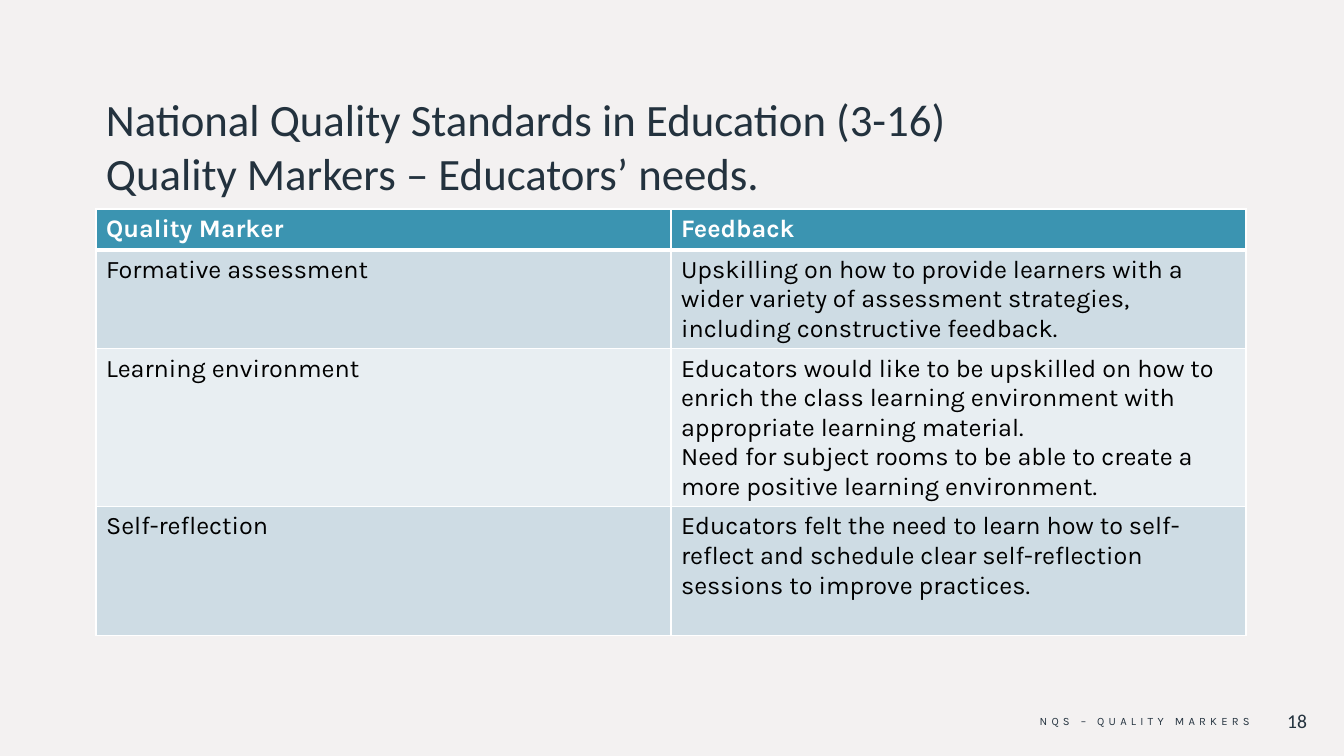
from dataclasses import dataclass

from lxml import etree
from pptx import Presentation
from pptx.dml.color import RGBColor
from pptx.enum.shapes import MSO_SHAPE
from pptx.enum.text import MSO_ANCHOR, PP_ALIGN
from pptx.oxml.ns import qn
from pptx.util import Emu, Pt

RECTANGLE = MSO_SHAPE.RECTANGLE
BOTTOM, MIDDLE = MSO_ANCHOR.BOTTOM, MSO_ANCHOR.MIDDLE
LEFT, RIGHT = PP_ALIGN.LEFT, PP_ALIGN.RIGHT

PAGE_WIDTH, PAGE_HEIGHT = 1344, 756
EMU_PER_PX = 12192000 / PAGE_WIDTH


@dataclass(frozen=True)
class Theme:
    ink: str = "23323E"
    black: str = "000000"
    white: str = "FFFFFF"
    tint: str = "B5A5A2"
    tint_opacity: int = 15
    header: str = "3B94B1"
    bands: tuple[str, str] = ("CEDCE4", "E8EEF2")
    heading_font: str = "Calibri"
    body_font: str = "Karla"
    title_size: int = 32
    table_size: int = 18
    number_size: int = 14
    footer_size: int = 8


THEME = Theme()


@dataclass(frozen=True)
class TextStyle:
    font: str
    size: int
    color: str
    bold: bool = False
    tracking: int = 0  # points between letters


@dataclass(frozen=True)
class Label:
    text: str
    place: tuple[int, int, int, int]
    style: TextStyle
    anchor: MSO_ANCHOR
    align: PP_ALIGN


@dataclass(frozen=True)
class Marker:
    name: str
    feedback: str
    height: int


LABELS = [
    Label("National Quality Standards in Education (3-16)\vQuality Markers – Educators’ needs.",
          (96, 65, 1152, 139),
          TextStyle(THEME.heading_font, THEME.title_size, THEME.ink), BOTTOM, LEFT),
    Label("NQS – QUALITY MARKERS", (786, 701, 474, 40),
          TextStyle(THEME.body_font, THEME.footer_size, THEME.ink, tracking=3),
          MIDDLE, RIGHT),
    Label("18", (1260, 701, 57, 40),
          TextStyle(THEME.heading_font, THEME.number_size, THEME.ink), MIDDLE, RIGHT),
]

TABLE_LEFT, TABLE_TOP, COLUMN_WIDTH = 96, 209, 575
MARKERS = [
    Marker("Quality Marker", "Feedback", 41),
    Marker("Formative assessment",
           "Upskilling on how to provide learners with a wider variety of "
           "assessment strategies, including constructive feedback.", 98),
    Marker("Learning environment",
           "Educators would like to be upskilled on how to enrich the class "
           "learning environment with appropriate learning material.\n"
           "Need for subject rooms to be able to create a more positive "
           "learning environment.", 158),
    Marker("Self-reflection",
           "Educators felt the need to learn how to self-reflect and schedule "
           "clear self-reflection sessions to improve practices.", 129),
]


def px(length: int) -> Emu:
    return Emu(round(length * EMU_PER_PX))


def write(frame, text: str, style: TextStyle, align: PP_ALIGN = LEFT) -> None:
    frame.text = text
    for para in frame.paragraphs:
        para.alignment = align
        for span in para.runs:
            settings = {"name": style.font, "size": Pt(style.size), "bold": style.bold}
            for name, value in settings.items():
                setattr(span.font, name, value)
            span.font.color.rgb = RGBColor.from_string(style.color)
            if style.tracking:
                span.font._element.set("spc", str(style.tracking * 100))


def add_background(page) -> None:
    box = page.shapes.add_shape(RECTANGLE, 0, 0, px(PAGE_WIDTH), px(PAGE_HEIGHT))
    box.shadow.inherit = False
    box.line.fill.background()
    box.fill.solid()
    box.fill.fore_color.rgb = RGBColor.from_string(THEME.tint)
    color = box._element.spPr.find(f"{qn('a:solidFill')}/{qn('a:srgbClr')}")
    etree.SubElement(color, qn("a:alpha"), val=str(THEME.tint_opacity * 1000))


def add_label(page, label: Label) -> None:
    box = page.shapes.add_textbox(*map(px, label.place))
    frame = box.text_frame
    for name, value in {"word_wrap": True, "vertical_anchor": label.anchor}.items():
        setattr(frame, name, value)
    write(frame, label.text, label.style, label.align)


def add_borders(cell, widths: dict[str, int]) -> None:
    properties = cell._tc.get_or_add_tcPr()
    for side, width in widths.items():
        line = etree.SubElement(properties, qn(f"a:ln{side}"), w=str(Pt(width)))
        fill = etree.SubElement(line, qn("a:solidFill"))
        etree.SubElement(fill, qn("a:srgbClr"), val=THEME.white)


def add_marker_table(page) -> None:
    height = sum(marker.height for marker in MARKERS)
    table = page.shapes.add_table(len(MARKERS), 2, px(TABLE_LEFT), px(TABLE_TOP),
                                  px(2 * COLUMN_WIDTH), px(height)).table
    for column in table.columns:
        column.width = px(COLUMN_WIDTH)
    for index, marker in enumerate(MARKERS):
        table.rows[index].height = px(marker.height)
        is_header = index == 0
        fill = THEME.header if is_header else THEME.bands[(index - 1) % 2]
        style = TextStyle(THEME.body_font, THEME.table_size,
                          THEME.white if is_header else THEME.black, is_header)
        # The rule under the header is heavier than the others
        widths = {"L": 1, "R": 1, "T": 3 if index == 1 else 1, "B": 3 if is_header else 1}
        for column, text in enumerate((marker.name, marker.feedback)):
            cell = table.cell(index, column)
            add_borders(cell, widths)
            cell.fill.solid()
            cell.fill.fore_color.rgb = RGBColor.from_string(fill)
            write(cell.text_frame, text, style)


def main() -> None:
    deck = Presentation()
    deck.slide_width, deck.slide_height = px(PAGE_WIDTH), px(PAGE_HEIGHT)
    page = deck.slides.add_slide(deck.slide_layouts[6])

    # Tinted background
    add_background(page)
    # Quality markers and feedback
    add_marker_table(page)
    # Title, footer and page number
    for label in LABELS:
        add_label(page, label)

    deck.save("out.pptx")


if __name__ == "__main__":
    main()
